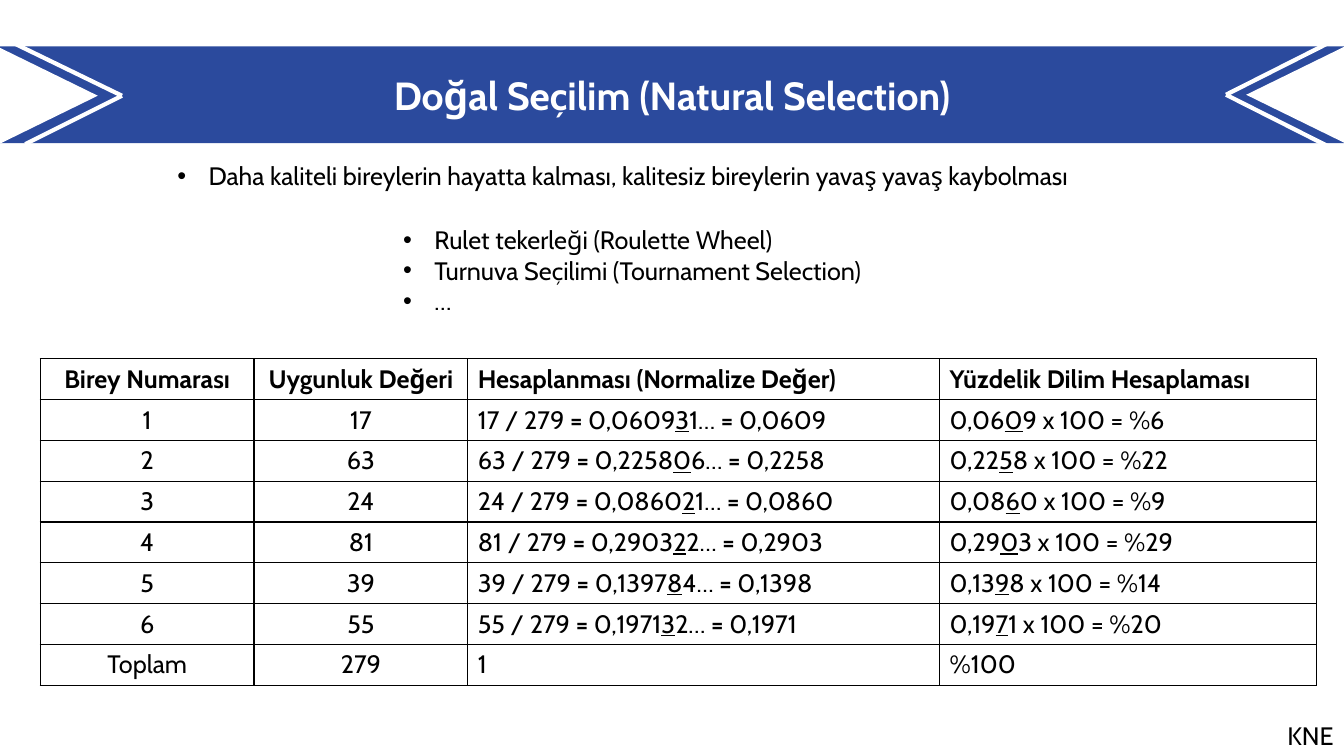
import pptx
import pptx.util
import pptx.dml.color
import pptx.enum.shapes
import pptx.enum.text
import pptx.oxml.ns
import lxml.etree

RGB = pptx.dml.color.RGBColor
BLUE = RGB(0x2B, 0x4A, 0x9D)
WHITE = RGB(0xFF, 0xFF, 0xFF)
BLACK = RGB(0, 0, 0)
FONT = "Cabin"
COLS, ROWS = 1333, 750
UNIT = pptx.util.Inches(0.01)
SHAPE = pptx.enum.shapes.MSO_SHAPE
ALIGN = pptx.enum.text.PP_ALIGN
ANCHOR = pptx.enum.text.MSO_ANCHOR
FIT = pptx.enum.text.MSO_AUTO_SIZE

HEADS = ["Birey Numarası", "Uygunluk Değeri",
         "Hesaplanması (Normalize Değer)", "Yüzdelik Dilim Hesaplaması"]
TOTAL = "279"
SCORES = [
    ("17", "0,060931", "0,0609", "%6"),
    ("63", "0,225806", "0,2258", "%22"),
    ("24", "0,086021", "0,0860", "%9"),
    ("81", "0,290322", "0,2903", "%29"),
    ("39", "0,139784", "0,1398", "%14"),
    ("55", "0,197132", "0,1971", "%20"),
]


def grid(*cells):
    return [pptx.util.Emu(n * UNIT) for n in cells]


def add(node, tag, **attrs):
    return lxml.etree.SubElement(node, pptx.oxml.ns.qn(tag), attrs)


def style(run, size=18, color=BLACK, bold=False, line=False):
    font = run.font
    font.name, font.size, font.bold = FONT, pptx.util.Pt(size), bold
    font.underline = line
    font.color.rgb = color


def block(slide, kind, box, color):
    shape = slide.shapes.add_shape(kind, *grid(*box))
    shape.shadow.inherit = False
    shape.fill.solid()
    shape.fill.fore_color.rgb = color
    shape.line.fill.background()
    return shape


def stroke(slide, start, end):
    line = slide.shapes.add_connector(
        pptx.enum.shapes.MSO_CONNECTOR.STRAIGHT, *grid(*start, *end))
    line.line.color.rgb = WHITE
    line.line.width = pptx.util.Pt(3)
    add(line._element.spPr, "a:effectLst")


def notch(slide, box, turn, tip, top, low):
    block(slide, SHAPE.ISOSCELES_TRIANGLE, box, WHITE).rotation = turn
    for end in (top, low):
        stroke(slide, end, tip)


def banner(slide, box):
    x, y, w, h = box
    band = block(slide, SHAPE.RECTANGLE, box, BLUE)
    frame = band.text_frame
    frame.text = "Doğal Seçilim (Natural Selection)"
    frame.vertical_anchor = ANCHOR.MIDDLE
    para = frame.paragraphs[0]
    para.alignment = ALIGN.CENTER
    style(para.runs[0], 28, WHITE, True)
    right = x + w
    notch(slide, (x, y, h, h + 2), 90,
          (x + 121, y + 49), (x + 16, y - 2), (x + 25, y + 97))
    notch(slide, (right - h, y - 1, h, h + 2), 270,
          (right - 117, y + 48), (right - 18, y - 2), (right - 16, y + 99))


def note(slide, box, lines, dots=True):
    frame = slide.shapes.add_textbox(*grid(*box)).text_frame
    frame.word_wrap = False
    frame.auto_size = FIT.SHAPE_TO_FIT_TEXT
    frame.text = "\n".join(lines)
    for para in frame.paragraphs:
        style(para.runs[0])
        if dots:
            props = para._p.get_or_add_pPr()
            dent = grid(31)[0]
            props.set("marL", str(dent))
            props.set("indent", str(-dent))
            add(props, "a:buFont", typeface="Arial")
            add(props, "a:buChar", char="•")


def border(cell):
    props = cell._tc.get_or_add_tcPr()
    for n, side in enumerate(("a:lnL", "a:lnR", "a:lnT", "a:lnB")):
        edge = add(props, side, w=str(pptx.util.Pt(1)))
        add(add(edge, "a:solidFill"), "a:srgbClr", val=str(BLACK))
        props.remove(edge)
        props.insert(n, edge)


def fill(cell, parts, center):
    cell.fill.background()
    border(cell)
    para = cell.text_frame.paragraphs[0]
    para.alignment = ALIGN.CENTER if center else ALIGN.LEFT
    for text, mark in parts:
        run = para.add_run()
        run.text = text
        style(run, bold=mark == "b", line=mark == "u")


def plain(texts, mark=""):
    return [[(text, mark)] for text in texts]


def score(num, row):
    value, ratio, short, share = row
    sums = [(f"{value} / {TOTAL} ", ""), ("=", "b"), (" " + ratio[:6], ""),
            (ratio[6], "u"), (ratio[7] + "… ", ""), ("=", "b"),
            (" " + short, "")]
    part = [(short[:4], ""), (short[4], "u"),
            (f"{short[5]} x 100 = {share}", "")]
    return plain([str(num), value]) + [sums, part]


def chart(slide, box, widths):
    rows = [plain(HEADS, "b")]
    rows += [score(n, row) for n, row in enumerate(SCORES, 1)]
    rows.append(plain(["Toplam", TOTAL, "1", "%100"]))
    table = slide.shapes.add_table(
        len(rows), len(widths), *grid(*box)).table
    table.first_row = table.horz_banding = False
    for col, width in zip(table.columns, grid(*widths)):
        col.width = width
    for r, row in enumerate(rows):
        for c, parts in enumerate(row):
            fill(table.cell(r, c), parts, c < 2)


def main():
    deck = pptx.Presentation()
    deck.slide_width, deck.slide_height = grid(COLS, ROWS)
    slide = deck.slides.add_slide(deck.slide_layouts[6])
    note(slide, (COLS - 66, ROWS - 40, 66, 40), ["KNE"], False)
    banner(slide, (0, 46, COLS, 96))
    note(slide, (166, 154, 935, 40), [
        "Daha kaliteli bireylerin hayatta kalması, "
        "kalitesiz bireylerin yavaş yavaş kaybolması"])
    note(slide, (390, 218, 488, 101), [
        "Rulet tekerleği (Roulette Wheel)",
        "Turnuva Seçilimi (Tournament Selection)", "…"])
    chart(slide, (40, 356, 1267, 324), (212, 212, 468, 374))
    deck.save("out.pptx")


if __name__ == "__main__":
    main()
